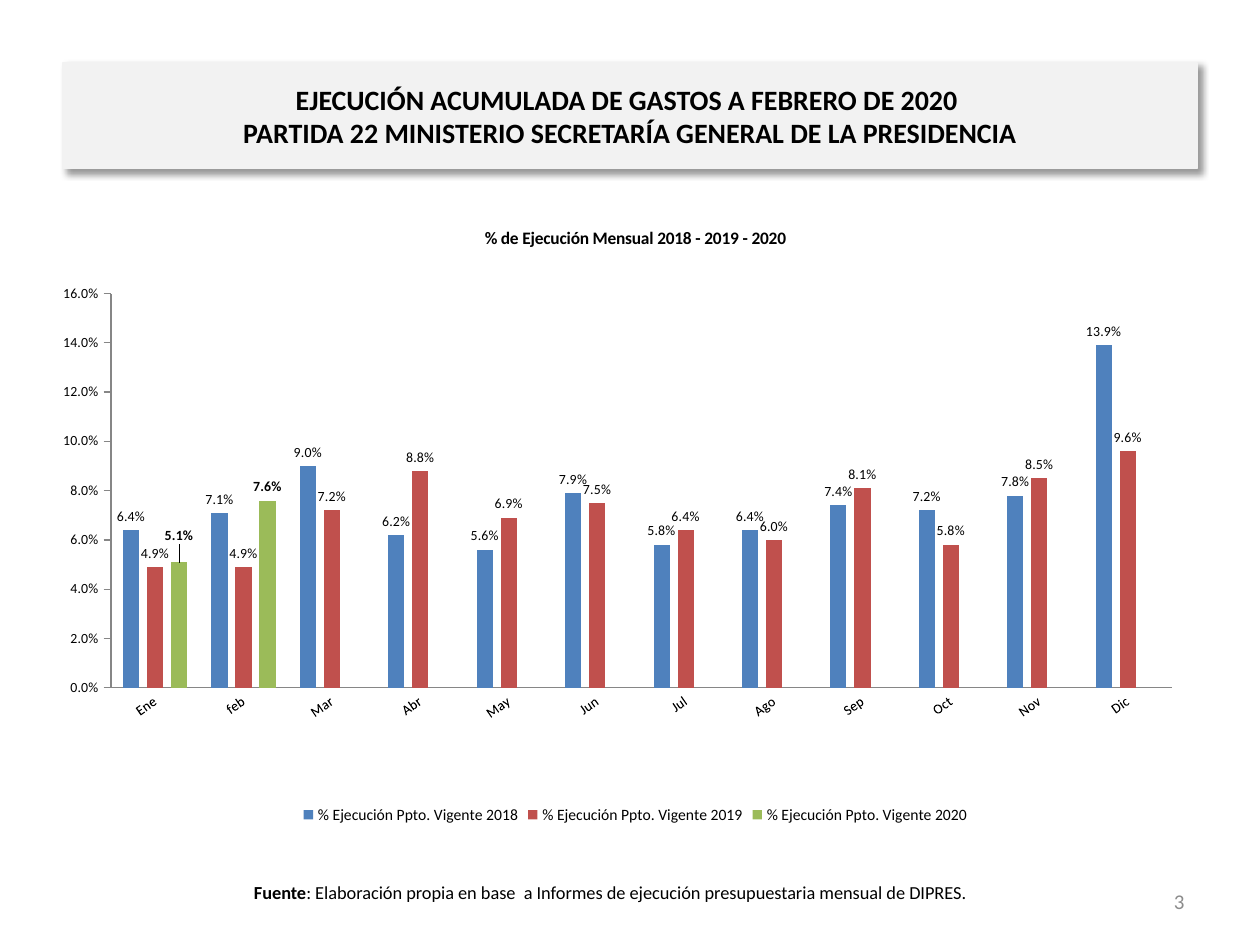
"""Build the monthly budget execution slide with its clustered column chart."""
from lxml import etree
from pptx import Presentation
from pptx import util as u
from pptx.chart.data import CategoryChartData
from pptx.dml.color import RGBColor
from pptx.enum import chart as c, text as t
from pptx.oxml import parse_xml
from pptx.oxml.ns import nsdecls, qn


def color(value):
    """Return the colour for a hex string."""
    return RGBColor.from_string(value)


def set_font(font, size, hex_color="000000", bold=False):
    """Apply the common font with a size, colour and weight."""
    for name, value in {"name": "Calibri", "size": u.Pt(size), "bold": bold}.items():
        setattr(font, name, value)
    font.color.rgb = color(hex_color)


deck = Presentation()
deck.slide_width, deck.slide_height = u.Inches(10), u.Inches(7.5)
page = deck.slides.add_slide(deck.slide_layouts[5])

title = page.shapes.title
title_place = {"left": 0.5, "top": 0.5, "width": 9, "height": 0.84}
for name, value in title_place.items():
    setattr(title, name, u.Inches(value))
title.fill.solid()
title.fill.fore_color.rgb = color("F2F2F2")
title.line.color.rgb = color("F2F2F2")
title.line.width = u.Pt(0.75)
title._element.spPr.append(parse_xml(
    f'<a:effectLst {nsdecls("a")}><a:outerShdw blurRad="{u.Pt(4)}" dist="{u.Pt(3)}" '
    'dir="2700000" algn="tl" rotWithShape="0"><a:srgbClr val="000000">'
    '<a:alpha val="40000"/></a:srgbClr></a:outerShdw></a:effectLst>'))
frame = title.text_frame
frame.text = ("EJECUCIÓN ACUMULADA DE GASTOS A FEBRERO DE 2020 \v"
              "PARTIDA 22 MINISTERIO SECRETARÍA GENERAL DE LA PRESIDENCIA")
frame.auto_size = t.MSO_AUTO_SIZE.NONE
frame.vertical_anchor = t.MSO_ANCHOR.MIDDLE
frame.paragraphs[0].alignment = t.PP_ALIGN.CENTER
for span in frame.paragraphs[0].runs:
    set_font(span.font, 16, bold=True)

source = [("Fuente", True),
          (": Elaboración propia en base  a Informes de ejecución presupuestaria mensual de DIPRES.",
           False)]
footers = [
    ((7.17, 6.95, 2.33, 0.4), t.PP_ALIGN.RIGHT, 12, "8C8C8C", [("3", False)]),
    ((1.46, 6.88, 6.77, 0.4), t.PP_ALIGN.CENTER, 10.5, "000000", source),
]
for place, alignment, size, hex_color, spans in footers:
    box = page.shapes.add_textbox(*map(u.Inches, place))
    box.text_frame.word_wrap = True
    box.text_frame.vertical_anchor = t.MSO_ANCHOR.MIDDLE
    para = box.text_frame.paragraphs[0]
    para.alignment = alignment
    for words, bold in spans:
        span = para.add_run()
        span.text = words
        set_font(span.font, size, hex_color, bold)

series_data = [
    (2018, "4F81BD", (0.064, 0.071, 0.09, 0.062, 0.056, 0.079,
                      0.058, 0.064, 0.074, 0.072, 0.078, 0.139)),
    (2019, "C0504D", (0.049, 0.049, 0.072, 0.088, 0.069, 0.075,
                      0.064, 0.06, 0.081, 0.058, 0.085, 0.096)),
    (2020, "9BBB59", (0.051, 0.076) + (None,) * 10),
]
data = CategoryChartData(number_format="0.0%")
data.categories = "Ene feb Mar Abr May Jun Jul Ago Sep Oct Nov Dic".split()
for year, _, values in series_data:
    data.add_series(f"% Ejecución Ppto. Vigente {year}", values)
chart_width, chart_height = 9, 4.96
chart = page.shapes.add_chart(c.XL_CHART_TYPE.COLUMN_CLUSTERED, u.Inches(0.5), u.Inches(1.62),
                              u.Inches(chart_width), u.Inches(chart_height), data).chart
set_font(chart.font, 10)
chart.chart_title.text_frame.text = "% de Ejecución Mensual 2018 - 2019 - 2020"
set_font(chart.chart_title.text_frame.paragraphs[0].runs[0].font, 10, bold=True)
chart.has_legend = True
chart.legend.position = c.XL_LEGEND_POSITION.BOTTOM
chart.legend.include_in_layout = False
set_font(chart.legend.font, 9)

plot = chart.plots[0]
for name, value in {"gap_width": 150, "overlap": -49, "vary_by_categories": False}.items():
    setattr(plot, name, value)
for series, (year, hex_color, _) in zip(plot.series, series_data):
    series.format.fill.solid()
    series.format.fill.fore_color.rgb = color(hex_color)
    label_format = {"show_value": True, "number_format": "0.0%", "number_format_is_linked": False,
                    "position": c.XL_LABEL_POSITION.OUTSIDE_END}
    for name, value in label_format.items():
        setattr(series.data_labels, name, value)
    set_font(series.data_labels.font, 8, bold=year == 2020)
    labels = series._element.find(qn("c:dLbls"))
    for leader in labels.findall(qn("c:showLeaderLines")):
        labels.remove(leader)
    labels.append(parse_xml(
        f'<c:extLst {nsdecls("c")}><c:ext uri="{{CE6537A1-D6FC-4f65-9D91-7224C49458BB}}" '
        'xmlns:c15="http://schemas.microsoft.com/office/drawing/2012/chart">'
        '<c15:showLeaderLines val="0"/></c:ext></c:extLst>'))

raised = plot.series[2].points[0].data_label
set_font(raised.font, 8, bold=True)
raised.position = c.XL_LABEL_POSITION.OUTSIDE_END
label = plot.series[2]._element.find(".//" + qn("c:dLbl"))
label.insert(1, parse_xml(f'<c:layout {nsdecls("c")}><c:manualLayout><c:x val="0"/>'
                          '<c:y val="-0.02"/></c:manualLayout></c:layout>'))

months, rates = chart.category_axis, chart.value_axis
for axis, tick in ((months, c.XL_TICK_MARK.NONE), (rates, c.XL_TICK_MARK.OUTSIDE)):
    axis.major_tick_mark = tick
    axis.minor_tick_mark = c.XL_TICK_MARK.NONE
    axis.has_major_gridlines = False
    axis.format.line.color.rgb = color("868686")
    set_font(axis.tick_labels.font, 8)
months._element.find(qn("c:txPr")).find(qn("a:bodyPr")).set("rot", "-2100000")
rates.minimum_scale, rates.maximum_scale, rates.major_unit = 0, 0.16, 0.02
rates.tick_labels.number_format = "0.0%"
rates.tick_labels.number_format_is_linked = False

area = chart._chartSpace.chart.plotArea
for old in area.findall(qn("c:layout")):
    area.remove(old)
layout = etree.Element(qn("c:layout"))
manual = etree.SubElement(layout, qn("c:manualLayout"))
layout_values = {"layoutTarget": "inner", "xMode": "edge", "yMode": "edge",
                 "x": 0.3 / chart_width, "y": 0.71 / chart_height,
                 "w": 8.5 / chart_width, "h": 3.13 / chart_height}
for name, value in layout_values.items():
    etree.SubElement(manual, qn(f"c:{name}")).set("val", str(value))
area.insert(0, layout)

deck.save("out.pptx")
